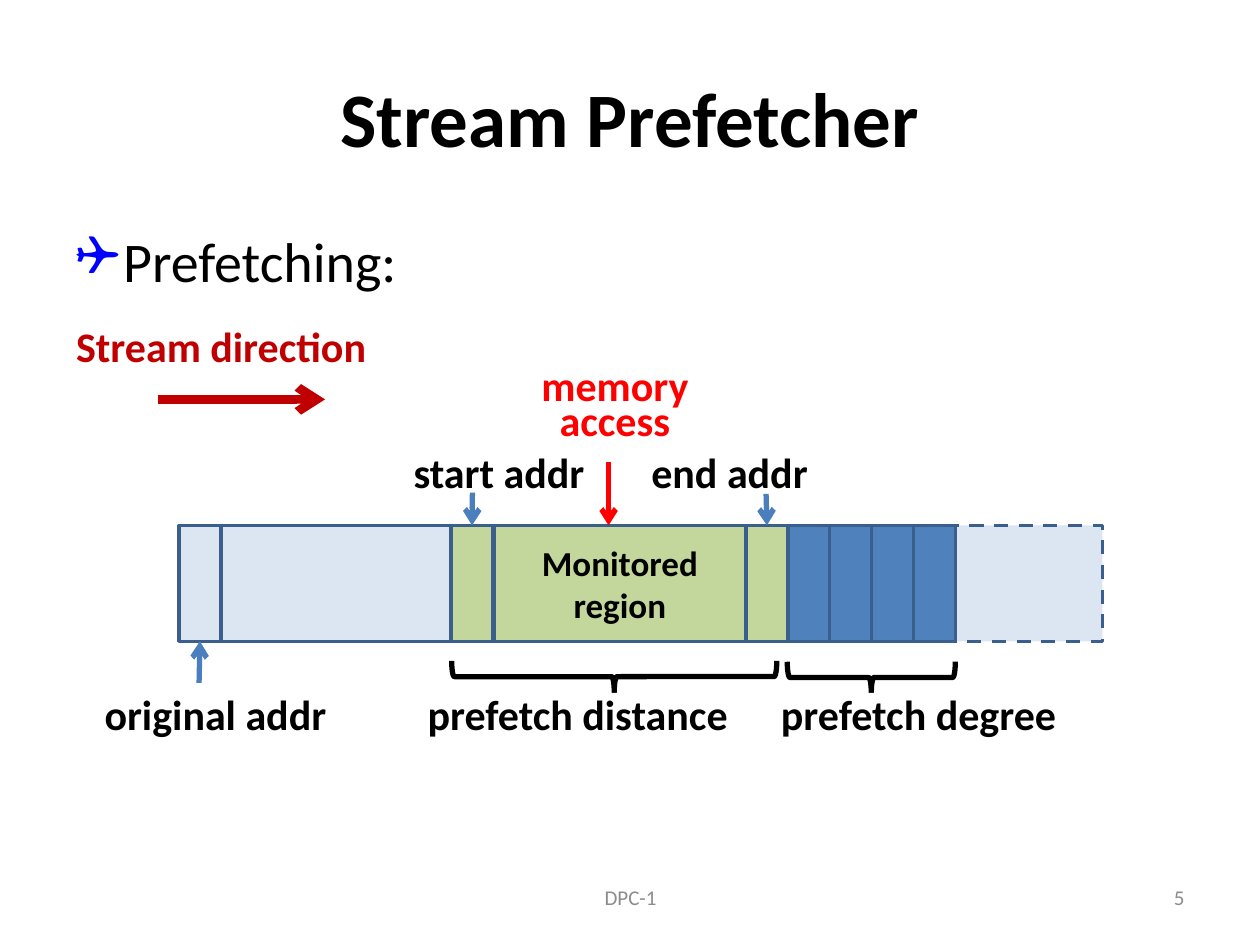
from lxml.etree import SubElement
from pptx import Presentation
from pptx.dml.color import RGBColor
from pptx.enum.dml import MSO_LINE
from pptx.enum.shapes import MSO_CONNECTOR, MSO_SHAPE
from pptx.enum.text import MSO_ANCHOR, PP_ALIGN
from pptx.oxml.ns import qn
from pptx.util import Inches, Pt

BLACK = RGBColor(0, 0, 0)
WHITE = RGBColor(0xFF, 0xFF, 0xFF)
RED = RGBColor(0xFF, 0, 0)
DARK_RED = RGBColor(0xC0, 0, 0)
GRAY = RGBColor(0x8C, 0x8C, 0x8C)
OUTLINE = RGBColor(0x3A, 0x5F, 0x8C)
ARROW_BLUE = RGBColor(0x4B, 0x7E, 0xBC)
PALE_BLUE = RGBColor(0xDC, 0xE6, 0xF2)
BLUE = RGBColor(0x4F, 0x81, 0xBD)
GREEN = RGBColor(0xC3, 0xD6, 0x9B)

BAR_TOP, BAR_HEIGHT = 4.17, 0.92
CELL = 1 / 3
DEGREE_LEFT = 6.25


def write_text(shape, text, size=24, color=BLACK, bold=True,
               align=PP_ALIGN.CENTER, anchor=MSO_ANCHOR.MIDDLE):
    frame = shape.text_frame
    frame.word_wrap = True
    frame.vertical_anchor = anchor
    paragraph = frame.paragraphs[0]
    paragraph.alignment = align
    run = paragraph.add_run()
    run.text = text
    run.font.name = "Calibri"
    run.font.size = Pt(size)
    run.font.bold = bold
    run.font.color.rgb = color
    return paragraph


def add_box(left, top, width, height, fill=None, line=None, line_width=2,
            preset=MSO_SHAPE.RECTANGLE):
    shape = slide.shapes.add_shape(
        preset, Inches(left), Inches(top), Inches(width), Inches(height))
    shape.shadow.inherit = False
    if fill is None:
        shape.fill.background()
    else:
        shape.fill.solid()
        shape.fill.fore_color.rgb = fill
    if line is None:
        shape.line.fill.background()
    else:
        shape.line.color.rgb = line
        shape.line.width = Pt(line_width)
    return shape


presentation = Presentation()
presentation.slide_width = Inches(10)
presentation.slide_height = Inches(7.5)
slide = presentation.slides.add_slide(presentation.slide_layouts[5])

title = slide.shapes.title
title.left, title.top = Inches(0.5), Inches(0.3)
title.width, title.height = Inches(9), Inches(1.25)
write_text(title, "Stream Prefetcher", size=44)

body = slide.shapes.add_textbox(Inches(0.5), Inches(1.75), Inches(9), Inches(4.95))
paragraph = write_text(body, "Prefetching:", size=32, bold=False,
                       align=PP_ALIGN.LEFT, anchor=MSO_ANCHOR.TOP)
paragraph.space_before = Pt(6.4)
properties = paragraph._p.get_or_add_pPr()
properties.set("marL", str(Inches(0.38)))
properties.set("indent", str(Inches(-0.38)))
bullet_color = SubElement(properties, qn("a:buClr"))
SubElement(bullet_color, qn("a:srgbClr")).set("val", "0000FF")
SubElement(properties, qn("a:buFont")).set("typeface", "Wingdings")
SubElement(properties, qn("a:buChar")).set("char", "❑")

future_region = add_box(5.92, BAR_TOP, 2.83, BAR_HEIGHT, PALE_BLUE, OUTLINE)
future_region.line.dash_style = MSO_LINE.DASH
add_box(1.75, BAR_TOP, 4.17, BAR_HEIGHT, PALE_BLUE, OUTLINE)
original_cell = add_box(1.42, BAR_TOP, CELL, BAR_HEIGHT, PALE_BLUE, OUTLINE)
for index in range(4):
    add_box(DEGREE_LEFT + index * CELL, BAR_TOP, CELL, BAR_HEIGHT, BLUE, OUTLINE)
monitored_region = add_box(3.92, BAR_TOP, 2, BAR_HEIGHT, GREEN, OUTLINE)
write_text(monitored_region, "Monitored region", size=20)
start_cell = add_box(3.58, BAR_TOP, CELL, BAR_HEIGHT, GREEN, OUTLINE)
end_cell = add_box(5.92, BAR_TOP, CELL, BAR_HEIGHT, GREEN, OUTLINE)

arrows = [
    (1.25, 3.17, 2.58, 3.17, DARK_RED, 5, None, None),
    (4.83, 3.67, 4.83, BAR_TOP, RED, 3, None, None),
    (1.58, 5.42, 1.58, 5.09, ARROW_BLUE, 3, original_cell, 2),
    (3.75, 3.83, 3.75, BAR_TOP, ARROW_BLUE, 3, start_cell, 0),
    (6.08, 3.92, 6.08, BAR_TOP, ARROW_BLUE, 3, end_cell, 0),
]
for x1, y1, x2, y2, color, width, target, site in arrows:
    arrow = slide.shapes.add_connector(
        MSO_CONNECTOR.STRAIGHT, Inches(x1), Inches(y1), Inches(x2), Inches(y2))
    if target is not None:
        arrow.end_connect(target, site)
    arrow.line.color.rgb = color
    arrow.line.width = Pt(width)
    SubElement(arrow.line._get_or_add_ln(), qn("a:tailEnd")).set("type", "arrow")
    SubElement(arrow._element.spPr, qn("a:effectLst"))

for left, top, length in [(4.75, 4.08, 2.58), (6.79, 4.71, 4 * CELL)]:
    brace = add_box(left, top, 0.25, length, line=BLACK, line_width=3,
                    preset=MSO_SHAPE.LEFT_BRACE)
    brace.rotation = 270

labels = [
    ("Stream direction", 0.42, 2.58, 2.67, DARK_RED),
    ("start addr", 3.17, 3.58, 1.58, BLACK),
    ("end addr", 5, 3.58, 1.58, BLACK),
    ("original addr", 0.5, 5.5, 2.42, BLACK),
    ("prefetch distance", 3.25, 5.5, 2.67, BLACK),
    ("prefetch degree", 6.08, 5.5, 2.42, BLACK),
]
for text, left, top, width, color in labels:
    write_text(add_box(left, top, width, 0.33, WHITE), text, color=color)

access_label = add_box(4.17, 2.92, 1.42, 0.67, WHITE)
write_text(access_label, "memory access", color=RED).line_spacing = Pt(20)

for text, left, width, align in [("DPC-1", 3.42, 3.17, PP_ALIGN.CENTER),
                                 ("5", 7.17, 2.33, PP_ALIGN.RIGHT)]:
    footer = slide.shapes.add_textbox(
        Inches(left), Inches(6.92), Inches(width), Inches(0.4))
    write_text(footer, text, size=12, color=GRAY, bold=False, align=align)

presentation.save("out.pptx")
